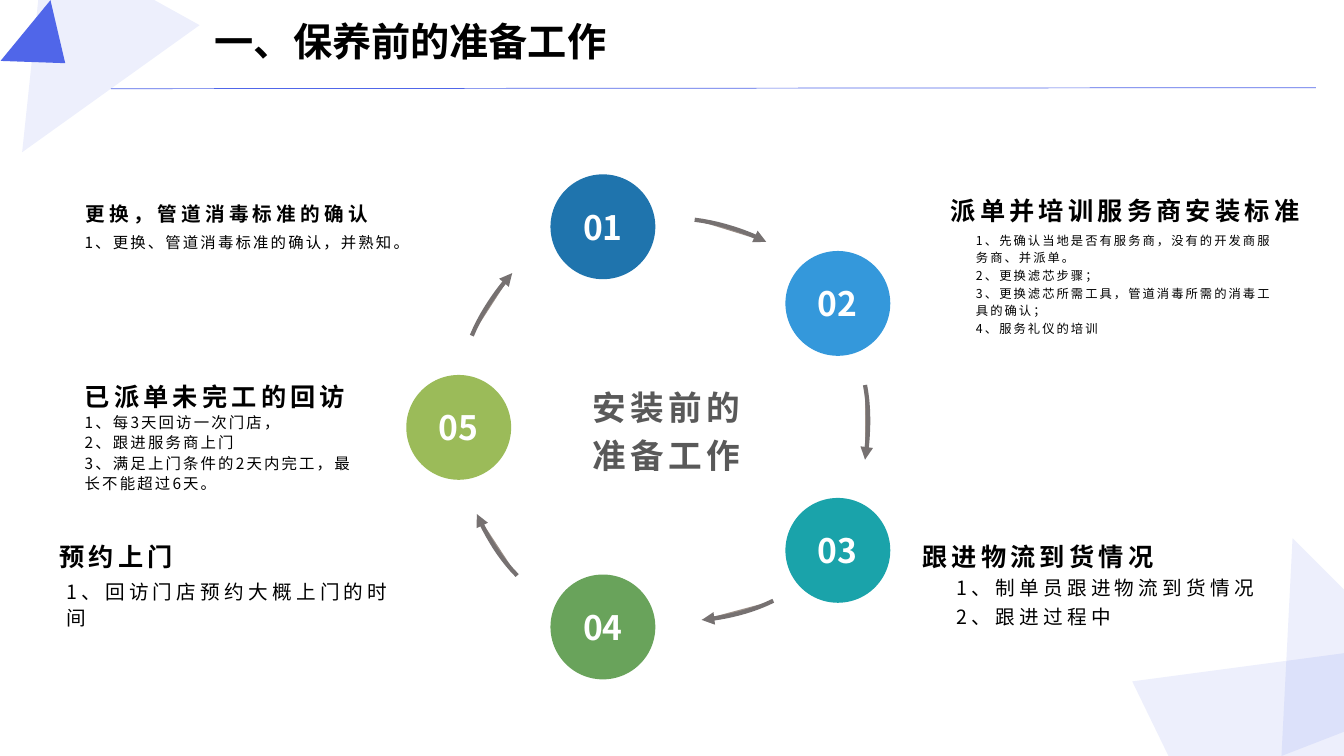
from lxml.etree import SubElement
from pptx import Presentation
from pptx.dml.color import RGBColor
from pptx.enum.shapes import MSO_CONNECTOR, MSO_SHAPE
from pptx.enum.text import MSO_ANCHOR as ANCHOR, MSO_AUTO_SIZE as FIT, PP_ALIGN as ALIGN
from pptx.oxml.ns import qn
from pptx.util import Inches, Pt

FONT = "Noto Sans CJK SC"
INDIGO = RGBColor(0x50, 0x66, 0xE9)
BLACK = RGBColor(0x00, 0x00, 0x00)
WHITE = RGBColor(0xFF, 0xFF, 0xFF)
GRAY = RGBColor(0x59, 0x59, 0x59)
ARROW_LINE = RGBColor(0x76, 0x71, 0x71)
ARROW_FILL = RGBColor(0x9C, 0x90, 0x88)
BLUE = RGBColor(0x1F, 0x74, 0xAD)
SKY = RGBColor(0x34, 0x98, 0xDB)
TEAL = RGBColor(0x1A, 0xA3, 0xAA)
GREEN = RGBColor(0x69, 0xA3, 0x5B)
LIME = RGBColor(0x9B, 0xBB, 0x59)

HEAD_INSETS = (0.1, 0.05, 0.1, 0)
LIST_INSETS = (0.1, 0, 0.1, 0.05)
DIAMETER = 1.04

STEPS = [
    ("01", 5.46, 1.73, BLUE),
    ("02", 7.79, 2.49, SKY),
    ("03", 7.79, 4.94, TEAL),
    ("04", 5.46, 5.7, GREEN),
    ("05", 4.03, 3.72, LIME),
]

ARROWS = [
    [(6.89, 2.18), (7.21, 2.22), (7.49, 2.34), (7.6, 2.4)],
    [(8.58, 3.82), (8.64, 4.13), (8.6, 4.44), (8.58, 4.56)],
    [(7.67, 5.96), (7.39, 6.1), (7.08, 6.14), (6.96, 6.15)],
    [(5.13, 5.71), (4.91, 5.49), (4.78, 5.21), (4.73, 5.1)],
    [(4.68, 3.33), (4.8, 3.04), (5, 2.8), (5.08, 2.71)],
]

SHARDS = [
    [(0.38, 0), (1.53, 0), (1.98, 0.25), (0.22, 1.51)],
    [(12.82, 5.34), (13.33, 5.85), (13.33, 7.26), (12.71, 7.5)],
    [(13.33, 6.48), (13.33, 7.5), (11.59, 7.5), (11.23, 6.76)],
]

HEADINGS = [
    ("更换，管道消毒标准的确认", (0.49, 1.59, 3.26, 0.65),
     dict(size=14, leading=1.2, align=ALIGN.RIGHT)),
    ("派单并培训服务商安装标准", (9.33, 1.59, 3.92, 0.65), dict(leading=1.2, holder=1)),
    ("跟进物流到货情况", (9.05, 4.91, 4.01, 0.76), {}),
    ("预约上门", (0.49, 4.91, 4.01, 0.76), {}),
    ("已派单未完工的回访", (0.74, 3.64, 3.02, 0.44), dict(leading=1.2, holder=3)),
]

LISTS = [
    ("1、更换、管道消毒标准的确认，并熟知。", (0.74, 2.28, 3.52, 1.23),
     dict(size=11, leading=1.2, spacing=1.5)),
    ("1、先确认当地是否有服务商，没有的开发商服务商、并派单。\n2、更换滤芯步骤；\n"
     "3、更换滤芯所需工具，管道消毒所需的消毒工具的确认；\n4、服务礼仪的培训",
     (9.58, 2.28, 3.24, 1.22), dict(size=8.8, leading=1.2, spacing=1.5, holder=2)),
    ("1、制单员跟进物流到货情况\n2、跟进过程中", (9.39, 5.67, 3.47, 1.41),
     dict(size=14, leading=1.2, spacing=3)),
    ("1、回访门店预约大概上门的时间", (0.56, 5.73, 3.47, 1.41),
     dict(size=14, leading=1.1, spacing=3)),
    ("1、每3天回访一次门店，\n2、跟进服务商上门\n3、满足上门条件的2天内完工，最长不能超过6天。",
     (0.74, 4.08, 3.02, 0.91), dict(size=11, leading=1.1, spacing=1.5, holder=4)),
]


def write(tf, text, size=18, color=BLACK, bold=False, spacing=0, leading=1.0,
          align=ALIGN.LEFT, anchor=ANCHOR.TOP, insets=(0.1, 0.05, 0.1, 0.05), wrap=True):
    """Fill a text frame, one paragraph for each line of text."""
    tf.auto_size, tf.word_wrap, tf.vertical_anchor = FIT.NONE, wrap, anchor
    tf.margin_left, tf.margin_top, tf.margin_right, tf.margin_bottom = map(Inches, insets)
    for i, line in enumerate(text.split("\n")):
        p = tf.add_paragraph() if i else tf.paragraphs[0]
        p.alignment, p.line_spacing, p.space_before = align, leading, Pt(0)
        pPr = p._p.get_or_add_pPr()
        pPr.set("marL", "0")
        pPr.set("indent", "0")
        SubElement(pPr, qn("a:buNone"))
        r = p.add_run()
        r.text = line
        r.font.size, r.font.bold, r.font.name = Pt(size), bold, FONT
        r.font.color.rgb = color
        rPr = r._r.get_or_add_rPr()
        rPr.set("spc", str(int(spacing * 100)))
        SubElement(rPr, qn("a:ea"), typeface=FONT)


class Deck:
    """Holds the current slide and draws styled elements on it."""

    def __init__(self, prs, layout):
        self.slide = prs.slides.add_slide(prs.slide_layouts[layout])
        self.shapes = self.slide.shapes

    def paint(self, sp, color, alpha=None):
        """Give a shape a flat fill without line or shadow."""
        sp.shadow.inherit = False
        sp.fill.solid()
        sp.fill.fore_color.rgb = color
        sp.line.fill.background()
        if alpha is not None:
            clr = sp._element.spPr.find(qn("a:solidFill"))[0]
            SubElement(clr, qn("a:alpha"), val=str(alpha * 1000))

    def text(self, text, box, holder=None, **style):
        """Place text in a placeholder or a new text box."""
        left, top, width, height = map(Inches, box)
        if holder is None:
            sp = self.shapes.add_textbox(left, top, width, height)
        else:
            sp = self.slide.placeholders[holder]
            sp.left, sp.top, sp.width, sp.height = left, top, width, height
        write(sp.text_frame, text, **style)

    def preset(self, kind, box, color, rotation=0):
        """Draw a flat preset shape."""
        sp = self.shapes.add_shape(kind, *map(Inches, box))
        sp.rotation = rotation
        self.paint(sp, color)
        return sp

    def outline(self, points, close=True):
        """Build a freeform through points given in inches."""
        pts = [(Inches(x), Inches(y)) for x, y in points]
        fb = self.shapes.build_freeform(*pts[0])
        fb.add_line_segments(pts[1:], close=close)
        return fb.convert_to_shape()

    def curved_arrow(self, controls, steps=12):
        """Draw an arrow along a cubic curve."""
        points = []
        for i in range(steps + 1):
            t = i / steps
            weights = ((1 - t) ** 3, 3 * t * (1 - t) ** 2, 3 * t * t * (1 - t), t ** 3)
            points.append([sum(w * c for w, c in zip(weights, axis)) for axis in zip(*controls)])
        sp = self.outline(points, close=False)
        self.paint(sp, ARROW_FILL)
        sp.line.color.rgb = ARROW_LINE
        sp.line.width = Pt(3)
        SubElement(sp.line._get_or_add_ln(), qn("a:tailEnd"), type="triangle")

    def rule(self, start, end, color, width):
        """Draw a straight thin line."""
        cx = self.shapes.add_connector(MSO_CONNECTOR.STRAIGHT, *map(Inches, start + end))
        cx.line.color.rgb = color
        cx.line.width = Pt(width)
        SubElement(cx._element.spPr, qn("a:effectLst"))


def main():
    """Build the slide and save it."""
    prs = Presentation()
    prs.slide_width, prs.slide_height = Inches(13.33), Inches(7.5)
    deck = Deck(prs, 4)
    for shard in SHARDS:
        deck.paint(deck.outline(shard), INDIGO, alpha=10)
    deck.preset(MSO_SHAPE.ISOSCELES_TRIANGLE, (0.06, 0.21, 0.78, 0.51), INDIGO, 129.4)
    deck.rule((1.1, 0.88), (13.05, 0.87), INDIGO, 0.5)
    deck.text("一、保养前的准备工作", (2.03, 0.12, 4.1, 0.57), holder=0,
              size=28, bold=True, wrap=False)
    for number, left, top, color in STEPS:
        sp = deck.preset(MSO_SHAPE.OVAL, (left, top, DIAMETER, DIAMETER), color)
        write(sp.text_frame, number, size=24, color=WHITE, bold=True, align=ALIGN.CENTER,
              anchor=ANCHOR.MIDDLE, insets=(0, 0, 0, 0))
    for arrow in ARROWS:
        deck.curved_arrow(arrow)
    deck.text("安装前的\n准备工作", (5.46, 3.09, 2.3, 2.29), size=24, color=GRAY, bold=True,
              spacing=3, leading=1.2, align=ALIGN.CENTER, anchor=ANCHOR.MIDDLE)
    for text, box, style in HEADINGS:
        deck.text(text, box, bold=True, spacing=3, anchor=ANCHOR.BOTTOM,
                  insets=HEAD_INSETS, **style)
    for text, box, style in LISTS:
        deck.text(text, box, insets=LIST_INSETS, **style)
    prs.save("out.pptx")


if __name__ == "__main__":
    main()
